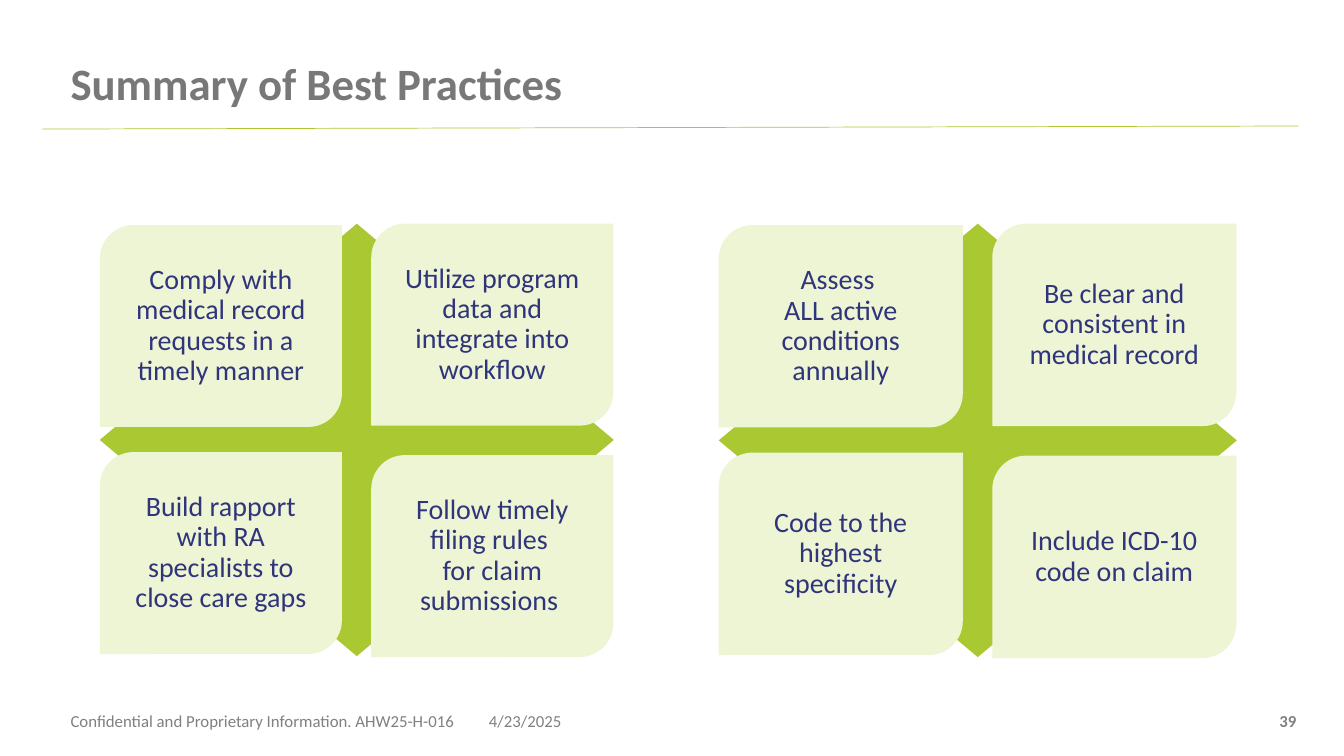
from dataclasses import dataclass

from pptx import Presentation
from pptx.dml.color import RGBColor
from pptx.enum.shapes import MSO_CONNECTOR, MSO_SHAPE
from pptx.enum.text import MSO_ANCHOR, PP_ALIGN
from pptx.oxml.ns import qn
from pptx.slide import Slide
from pptx.util import Pt
from lxml.etree import SubElement

GREEN = RGBColor(0xAA, 0xC8, 0x32)
PALE_GREEN = RGBColor(0xEE, 0xF5, 0xD5)
NAVY = RGBColor(0x30, 0x35, 0x7B)
TITLE_GRAY = RGBColor(0x78, 0x78, 0x78)
FOOTER_GRAY = RGBColor(0x80, 0x80, 0x80)
FONT = "Calibri"

# Tile positions and size as shares of the diamond's width and height
TILE_OFFSETS = ((0, 0.003), (0.528, 0), (0, 0.528), (0.528, 0.535))
TILE_SIZE = (0.471, 0.467)


@dataclass
class Cluster:
    left: float
    top: float
    width: float
    height: float
    practices: tuple[str, str, str, str]


@dataclass
class Footer:
    left: float
    width: float
    text: str
    inset: float = 0
    align: PP_ALIGN = PP_ALIGN.LEFT
    bold: bool = False


CLUSTERS = (
    Cluster(71.3, 159.8, 367.2, 308.9, (
        "Comply with medical record requests in a timely manner",
        "Utilize program data and integrate into workflow",
        "Build rapport with RA specialists to close care gaps",
        "Follow timely filing rules \nfor claim submissions ",
    )),
    Cluster(513.4, 159.8, 370.1, 309.6, (
        "Assess \nALL active conditions annually",
        "Be clear and consistent in medical record",
        "Code to the highest specificity",
        "Include ICD-10 code on claim",
    )),
)

FOOTERS = (
    Footer(349.2, 216, "4/23/2025"),
    Footer(50.4, 324, "Confidential and Proprietary Information. AHW25-H-016"),
    Footer(717.1, 216, "39", inset=7.2, align=PP_ALIGN.RIGHT, bold=True),
)


def add_run(p, text: str, size: float, color: RGBColor, bold: bool = False) -> None:
    r = p.add_run()
    r.text = text
    r.font.name = FONT
    r.font.size = Pt(size)
    r.font.bold = bold
    r.font.color.rgb = color


def set_insets(tf, left: float, top: float, right: float, bottom: float) -> None:
    tf.margin_left, tf.margin_top = Pt(left), Pt(top)
    tf.margin_right, tf.margin_bottom = Pt(right), Pt(bottom)
    tf.word_wrap = True


def add_title(s: Slide, text: str) -> None:
    sp = s.shapes.title
    sp.left, sp.top, sp.width, sp.height = Pt(50.4), Pt(40.3), Pt(378.7), Pt(54)
    tf = sp.text_frame
    set_insets(tf, 0, 3.6, 7.2, 3.6)
    tf.vertical_anchor = MSO_ANCHOR.TOP
    p = tf.paragraphs[0]
    p.alignment = PP_ALIGN.LEFT
    p.line_spacing = 0.9
    add_run(p, text, 32, TITLE_GRAY, bold=True)


def add_title_rule(s: Slide) -> None:
    line = s.shapes.add_connector(
        MSO_CONNECTOR.STRAIGHT, Pt(30.2), Pt(92.2), Pt(927.4), Pt(90))
    line.line.color.rgb = GREEN
    line.line.width = Pt(0.5)
    SubElement(line._element.spPr, qn("a:effectLst"))


def add_filled(shapes, kind: MSO_SHAPE, left: float, top: float,
               width: float, height: float, fill: RGBColor):
    sp = shapes.add_shape(kind, Pt(left), Pt(top), Pt(width), Pt(height))
    sp.shadow.inherit = False
    sp.fill.solid()
    sp.fill.fore_color.rgb = fill
    sp.line.fill.background()
    return sp


def add_cluster(s: Slide, c: Cluster) -> None:
    """Draw four practice tiles over a diamond, as one group."""
    shapes = s.shapes.add_group_shape().shapes
    add_filled(shapes, MSO_SHAPE.DIAMOND, c.left, c.top, c.width, c.height, GREEN)
    for (dx, dy), practice in zip(TILE_OFFSETS, c.practices):
        tile = add_filled(
            shapes, MSO_SHAPE.ROUND_2_DIAG_RECTANGLE,
            c.left + dx * c.width, c.top + dy * c.height,
            TILE_SIZE[0] * c.width, TILE_SIZE[1] * c.height, PALE_GREEN)
        tf = tile.text_frame
        set_insets(tf, 14.4, 14.4, 14.4, 14.4)
        tf.vertical_anchor = MSO_ANCHOR.MIDDLE
        p = tf.paragraphs[0]
        p.alignment = PP_ALIGN.CENTER
        p.line_spacing = 0.9
        for i, line in enumerate(practice.split("\n")):
            if i:
                p.add_line_break()
            add_run(p, line, 20, NAVY)


def add_footer(s: Slide, f: Footer) -> None:
    tf = s.shapes.add_textbox(Pt(f.left), Pt(500.4), Pt(f.width), Pt(28.8)).text_frame
    set_insets(tf, f.inset, 3.6, 7.2, 3.6)
    tf.vertical_anchor = MSO_ANCHOR.MIDDLE
    p = tf.paragraphs[0]
    p.alignment = f.align
    add_run(p, f.text, 12, FOOTER_GRAY, f.bold)


def main() -> None:
    prs = Presentation()
    prs.slide_width, prs.slide_height = Pt(960), Pt(540)
    s = prs.slides.add_slide(prs.slide_layouts[5])
    add_title_rule(s)
    add_title(s, "Summary of Best Practices")
    for cluster in CLUSTERS:
        add_cluster(s, cluster)
    for footer in FOOTERS:
        add_footer(s, footer)
    prs.save("out.pptx")


if __name__ == "__main__":
    main()
